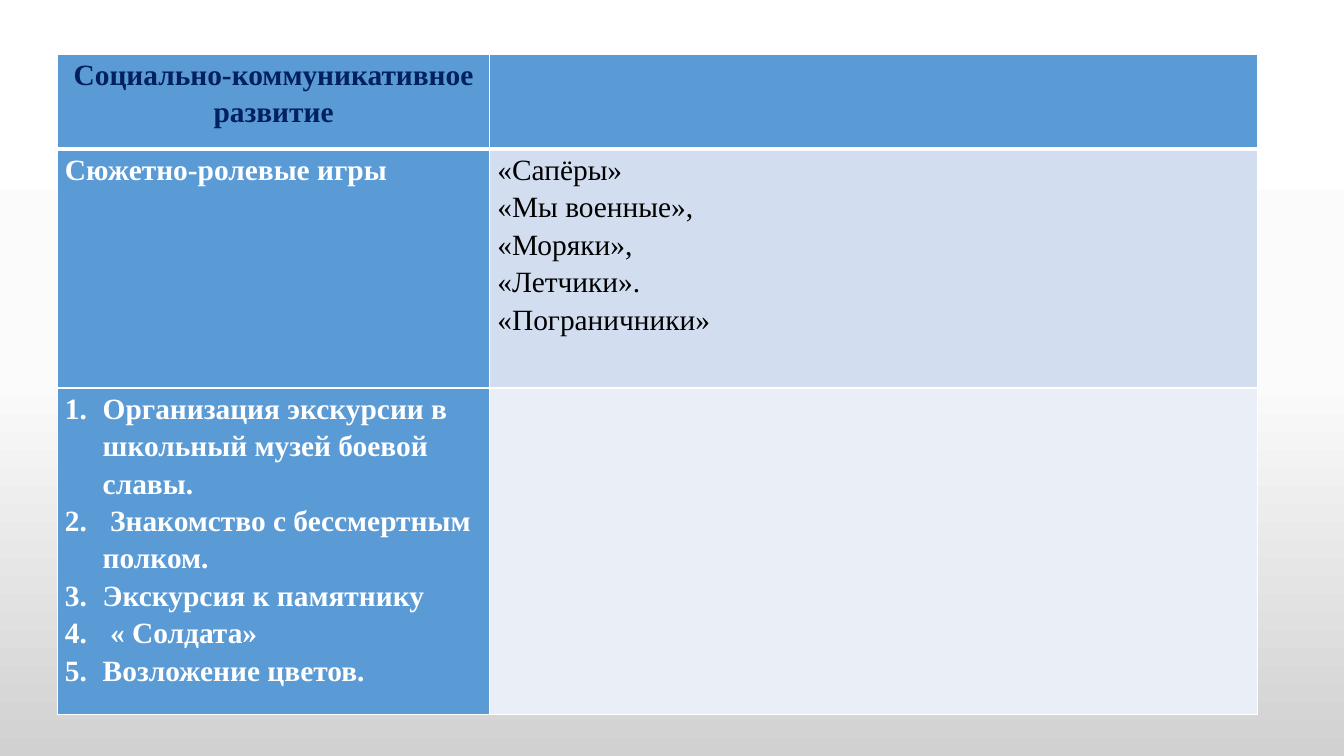
from copy import deepcopy
from dataclasses import dataclass

from pptx import Presentation
from pptx import util as u
from pptx.dml import color
from pptx.enum import text
from pptx.oxml import xmlchemy, ns
from lxml import etree


@dataclass(frozen=True)
class Theme:
    font: str = "Times New Roman"
    size: int = 21
    navy: str = "002060"
    white: str = "FFFFFF"
    black: str = "000000"
    blue: str = "5B9BD5"
    band: str = "D2DEEF"
    pale: str = "EAEFF7"
    backdrop: tuple = ((0, "FFFFFF"), (0.5, "FBFBFB"), (1, "D1D1D1"))


theme = Theme()


def write_cell(cell, lines, ink=theme.white, bold=True,
               align=text.PP_ALIGN.LEFT, numbered=False):
    frame = cell.text_frame
    for index, line in enumerate(lines):
        paragraph = frame.add_paragraph() if index else frame.paragraphs[0]
        paragraph.text = line
        paragraph.alignment = align
        paragraph.line_spacing = 1.15
        for run in paragraph.runs:
            run.font.name = theme.font
            run.font.size = u.Pt(theme.size)
            run.font.bold = bold
            run.font.color.rgb = color.RGBColor.from_string(ink)
        if numbered:
            properties = paragraph._p.get_or_add_pPr()
            properties.set("marL", str(u.Pt(27)))
            properties.set("indent", str(-u.Pt(27)))
            etree.SubElement(properties, ns.qn("a:buFont"), typeface="+mj-lt")
            etree.SubElement(properties, ns.qn("a:buAutoNum"), type="arabicPeriod")


presentation = Presentation()
presentation.slide_width = u.Pt(960)
presentation.slide_height = u.Pt(540)
slide = presentation.slides.add_slide(presentation.slide_layouts[6])

# Background: white fading to grey at the bottom
fill = slide.background.fill
fill.gradient()
fill.gradient_angle = 270
first_stop = fill._fill._gradFill.gsLst[0]
first_stop.addnext(deepcopy(first_stop))
for stop, (position, shade) in zip(fill.gradient_stops, theme.backdrop):
    stop.position = position
    stop.color.rgb = color.RGBColor.from_string(shade)

# Table grid
widths = (308.9, 548.6)
heights = (67.7, 170.6, 233.3)
table = slide.shapes.add_table(
    len(heights), len(widths), u.Pt(41), u.Pt(38.9),
    u.Pt(sum(widths)), u.Pt(sum(heights))).table
for column, width in zip(table.columns, widths):
    column.width = u.Pt(width)
for row, height in zip(table.rows, heights):
    row.height = u.Pt(height)

# Cell fills, margins and white borders, thicker under the header
fills = ((theme.blue, theme.blue),
         (theme.blue, theme.band),
         (theme.blue, theme.pale))
for row_index, row_fills in enumerate(fills):
    for column_index, shade in enumerate(row_fills):
        cell = table.cell(row_index, column_index)
        cell.margin_left = cell.margin_right = u.Pt(5.4)
        cell.margin_top = cell.margin_bottom = 0
        properties = cell._tc.get_or_add_tcPr()
        for side in ("L", "R", "T", "B"):
            under_header = (row_index, side) in ((0, "B"), (1, "T"))
            line = etree.SubElement(properties, ns.qn(f"a:ln{side}"),
                                    w=str(u.Pt(3 if under_header else 1)))
            solid = etree.SubElement(line, ns.qn("a:solidFill"))
            etree.SubElement(solid, ns.qn("a:srgbClr"), val=theme.white)
        cell.fill.solid()
        cell.fill.fore_color.rgb = color.RGBColor.from_string(shade)

# Cell texts
write_cell(table.cell(0, 0), ["Социально-коммуникативное развитие"],
           ink=theme.navy, align=text.PP_ALIGN.CENTER)
write_cell(table.cell(1, 0), ["Сюжетно-ролевые игры"],
           align=text.PP_ALIGN.JUSTIFY)
write_cell(table.cell(1, 1),
           ["«Сапёры»\v«Мы военные»,\v«Моряки»,\v«Летчики».", "«Пограничники»"],
           ink=theme.black, bold=False)
write_cell(table.cell(2, 0),
           ["Организация экскурсии в школьный музей боевой славы.",
            " Знакомство с бессмертным полком.",
            "Экскурсия к памятнику",
            " « Солдата»",
            "Возложение цветов."],
           numbered=True)

presentation.save("out.pptx")
